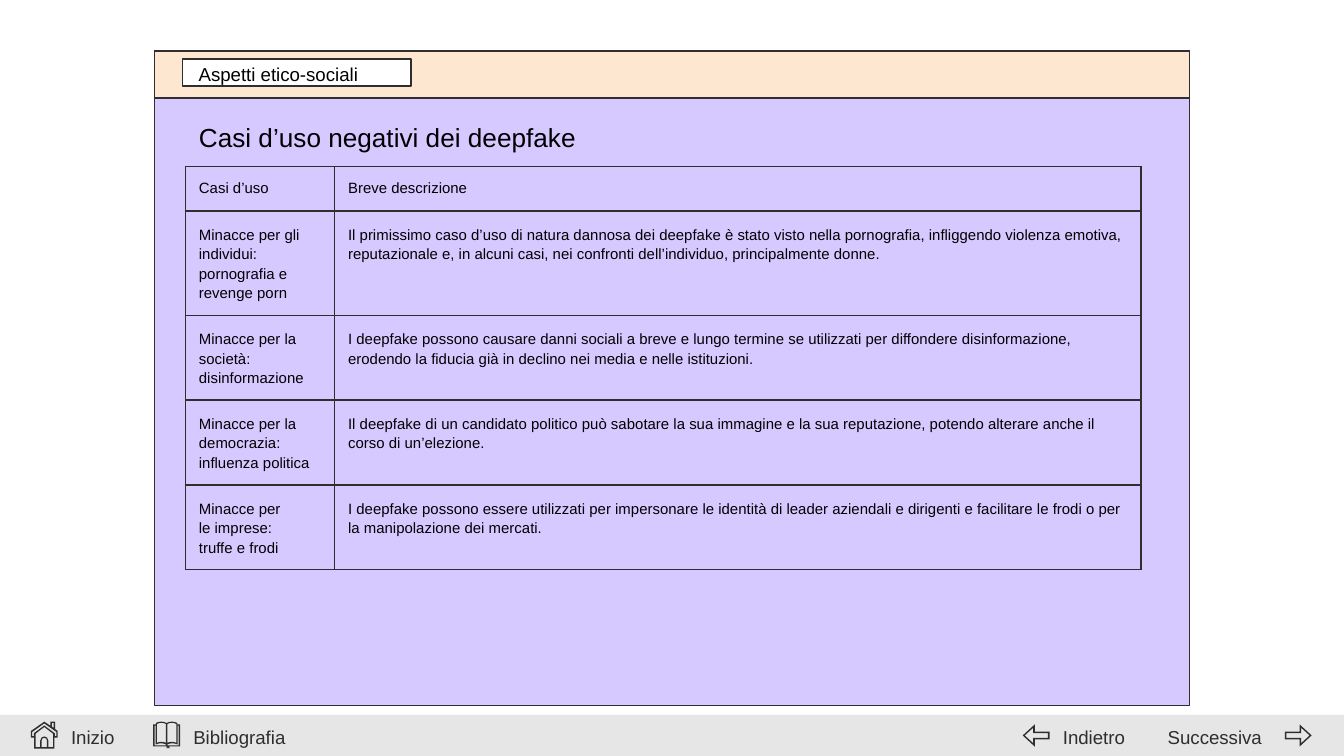
import pptx
import pptx.util
import pptx.dml.color
import pptx.enum.shapes
import pptx.enum.text
import pptx.oxml

Inches, Pt = pptx.util.Inches, pptx.util.Pt
RGB = pptx.dml.color.RGBColor
ANCHOR = pptx.enum.text.MSO_ANCHOR

BLACK, DARK, WHITE = RGB(0, 0, 0), RGB(0x2E, 0x2E, 0x2E), RGB(255, 255, 255)
GREY, LILAC, PEACH = RGB(0xE6, 0xE6, 0xE6), RGB(0xD6, 0xC9, 0xFF), RGB(0xFD, 0xE7, 0xD0)

TITLE = "Casi d’uso negativi dei deepfake"
TOPIC = "Aspetti etico-sociali"
PANELS = [  # box, fill, line
    ((0, 5.32, 10, 0.31), GREY, None),
    ((1.15, 0.38, 7.7, 4.87), LILAC, DARK),
    ((1.15, 0.38, 7.7, 0.35), PEACH, DARK),
    ((1.36, 0.44, 1.7, 0.2), WHITE, DARK),
]
COLS = [1.11, 2.44, 1.78, 1.78]
ROWS = [  # height, line spacing, case, description
    (0.33, 1, "Casi d’uso", "Breve descrizione"),
    (0.61, 1.15, "Minacce per gli individui: pornografia e revenge porn",
     "Il primissimo caso d’uso di natura dannosa dei deepfake è stato visto nella "
     "pornografia, infliggendo violenza emotiva, reputazionale e, in alcuni casi, "
     "nei confronti dell’individuo, principalmente donne."),
    (0.54, 1.15, "Minacce per la società: disinformazione",
     "I deepfake possono causare danni sociali a breve e lungo termine se utilizzati "
     "per diffondere disinformazione, erodendo la fiducia già in declino nei media e "
     "nelle istituzioni."),
    (0.58, 1.15, "Minacce per la democrazia:\ninfluenza politica",
     "Il deepfake di un candidato politico può sabotare la sua immagine e la sua "
     "reputazione, potendo alterare anche il corso di un’elezione."),
    (0.58, 1.15, "Minacce per\nle imprese:\ntruffe e frodi",
     "I deepfake possono essere utilizzati per impersonare le identità di leader "
     "aziendali e dirigenti e facilitare le frodi o per la manipolazione dei mercati."),
]
NAV = [("Inizio", 0.43, 0.71), ("Bibliografia", 1.34, 0.98),
       ("Indietro", 7.81, 0.78), ("Successiva", 8.59, 0.98)]


def flip(ring):
    """Mirror a ring left to right within an icon 20 units wide."""
    return [(20 - x, y) for x, y in ring]


# Icon rings, in hundredths of an inch
HOME = [
    [(10, 0), (0, 7), (0, 12), (2.5, 12), (2.5, 20), (17.5, 20), (17.5, 12), (20, 12),
     (20, 7), (18, 5.5), (18, 0), (14.5, 0), (14.5, 3)],
    [(10, 1.3), (19, 7.7), (19, 10.8), (17.8, 10.8), (17.8, 8.7), (10, 2.8),
     (2.2, 8.7), (2.2, 10.8), (1, 10.8), (1, 7.7)],
    [(10, 4), (16.5, 9), (16.5, 19), (13, 19), (13, 14), (12, 11.8), (10, 11),
     (8, 11.8), (7, 14), (7, 19), (3.5, 19), (3.5, 9)],
    [(10, 12), (11.5, 12.7), (12, 14), (12, 19), (8, 19), (8, 14), (8.5, 12.7)],
    [(15.6, 1), (17, 1), (17, 4.7), (15.6, 3.7)],
]
PAGE = [(2.7, 1.8), (4.3, 1.1), (6, 0.9), (8, 1.1), (9.5, 1.8), (9.5, 15.8),
        (8, 15.2), (6, 15), (4.3, 15.2), (2.7, 15.8)]
EDGE = [(1, 3), (1.8, 3), (1.8, 17), (4, 16.3), (6, 16.1), (8, 16.4), (9.5, 17),
        (9.5, 17.6), (1, 17.6)]
BOOK = [
    [(2, 1), (4, 0.2), (6, 0), (8, 0.2), (10, 1), (12, 0.2), (14, 0), (16, 0.2),
     (18, 1), (18, 2), (20, 2), (20, 18.5), (12, 18.5), (12, 20), (11, 19.3),
     (10, 20), (10, 18.5), (0, 18.5), (0, 2), (2, 2)],
    PAGE, flip(PAGE), EDGE, flip(EDGE),
]
NEXT = [
    [(11, 0), (20, 8.25), (11, 16.5), (11, 11.2), (0, 11.2), (0, 5.3), (11, 5.3)],
    [(12.2, 2.5), (18.5, 8.25), (12.2, 14), (12.2, 10), (1.2, 10), (1.2, 6.5), (12.2, 6.5)],
]
BACK = [flip(ring) for ring in NEXT]
ICONS = [(HOME, 0.23, 5.37), (BOOK, 1.14, 5.37), (BACK, 7.61, 5.39), (NEXT, 9.56, 5.39)]


def write(frame, text, size=10, color=BLACK, anchor=ANCHOR.TOP, space=None):
    frame.word_wrap = True
    frame.vertical_anchor = anchor
    frame.text = text
    for para in frame.paragraphs:
        para.alignment = pptx.enum.text.PP_ALIGN.LEFT
        para.line_spacing = space
        font = para.font
        font.name, font.size, font.color.rgb = "Arial", Pt(size), color


def pad(item):
    item.margin_left = item.margin_right = Inches(0.1)
    item.margin_top = item.margin_bottom = Inches(0.1)


def paint(shape, fill, line=None):
    shape.shadow.inherit = False
    shape.fill.solid()
    shape.fill.fore_color.rgb = fill
    if line is None:
        shape.line.fill.background()
    else:
        shape.line.color.rgb = line
        shape.line.width = Pt(0.75)


def label(slide, text, box, **form):
    frame = slide.shapes.add_textbox(*map(Inches, box)).text_frame
    pad(frame)
    write(frame, text, **form)


def draw(slide, rings, left, top):
    """Draw one icon as a single outline with holes."""
    pen = None
    for ring in rings:
        pts = [(x * 10, y * 10) for x, y in ring]
        if pen is None:
            pen = slide.shapes.build_freeform(*pts[0], scale=Inches(0.001))
        else:
            pen.move_to(*pts[0])
        pen.add_line_segments(pts[1:], close=True)
    paint(pen.convert_to_shape(Inches(left), Inches(top)), DARK)


def edge(cell):
    """Give a cell a thin line on all four sides."""
    props = cell._tc.get_or_add_tcPr()
    for spot, side in enumerate("LRTB"):
        props.insert(spot, pptx.oxml.parse_xml(
            f'<a:ln{side} xmlns:a="http://schemas.openxmlformats.org/drawingml/2006/main" '
            f'w="9525"><a:solidFill><a:srgbClr val="{DARK}"/></a:solidFill></a:ln{side}>'))


def grid(slide):
    size = sum(COLS), sum(row[0] for row in ROWS)
    table = slide.shapes.add_table(len(ROWS), len(COLS), Inches(1.38), Inches(1.24),
                                   *map(Inches, size)).table
    table.first_row = table.horz_banding = False
    for col, width in zip(table.columns, COLS):
        col.width = Inches(width)
    for r, (height, space, *texts) in enumerate(ROWS):
        table.rows[r].height = Inches(height)
        for c in range(len(COLS)):
            cell = table.cell(r, c)
            pad(cell)
            cell.fill.background()
            edge(cell)
            text = texts[c] if c < len(texts) else ""
            write(cell.text_frame, text, size=8, space=space)
        table.cell(r, 1).merge(table.cell(r, len(COLS) - 1))


def main():
    deck = pptx.Presentation()
    deck.slide_width = Inches(10)
    deck.slide_height = deck.slide_width * 9 // 16
    slide = deck.slides.add_slide(deck.slide_layouts[5])
    for box, fill, line in PANELS:
        kind = pptx.enum.shapes.MSO_SHAPE.RECTANGLE
        paint(slide.shapes.add_shape(kind, *map(Inches, box)), fill, line)
    grid(slide)
    label(slide, TOPIC, (1.38, 0.45, 1.68, 0.2), anchor=ANCHOR.MIDDLE)

    title = slide.shapes.title
    title.left, title.top, title.width, title.height = map(Inches, (1.38, 0.8, 3.35, 0.44))
    pad(title.text_frame)
    title.text_frame.auto_size = pptx.enum.text.MSO_AUTO_SIZE.NONE
    write(title.text_frame, TITLE, size=14)
    slide.shapes._spTree.append(title._element)  # in front of the panels

    for icon in ICONS:
        draw(slide, *icon)
    for text, left, width in NAV:
        label(slide, text, (left, 5.32, width, 0.35), color=DARK)
    deck.save("out.pptx")


if __name__ == "__main__":
    main()
